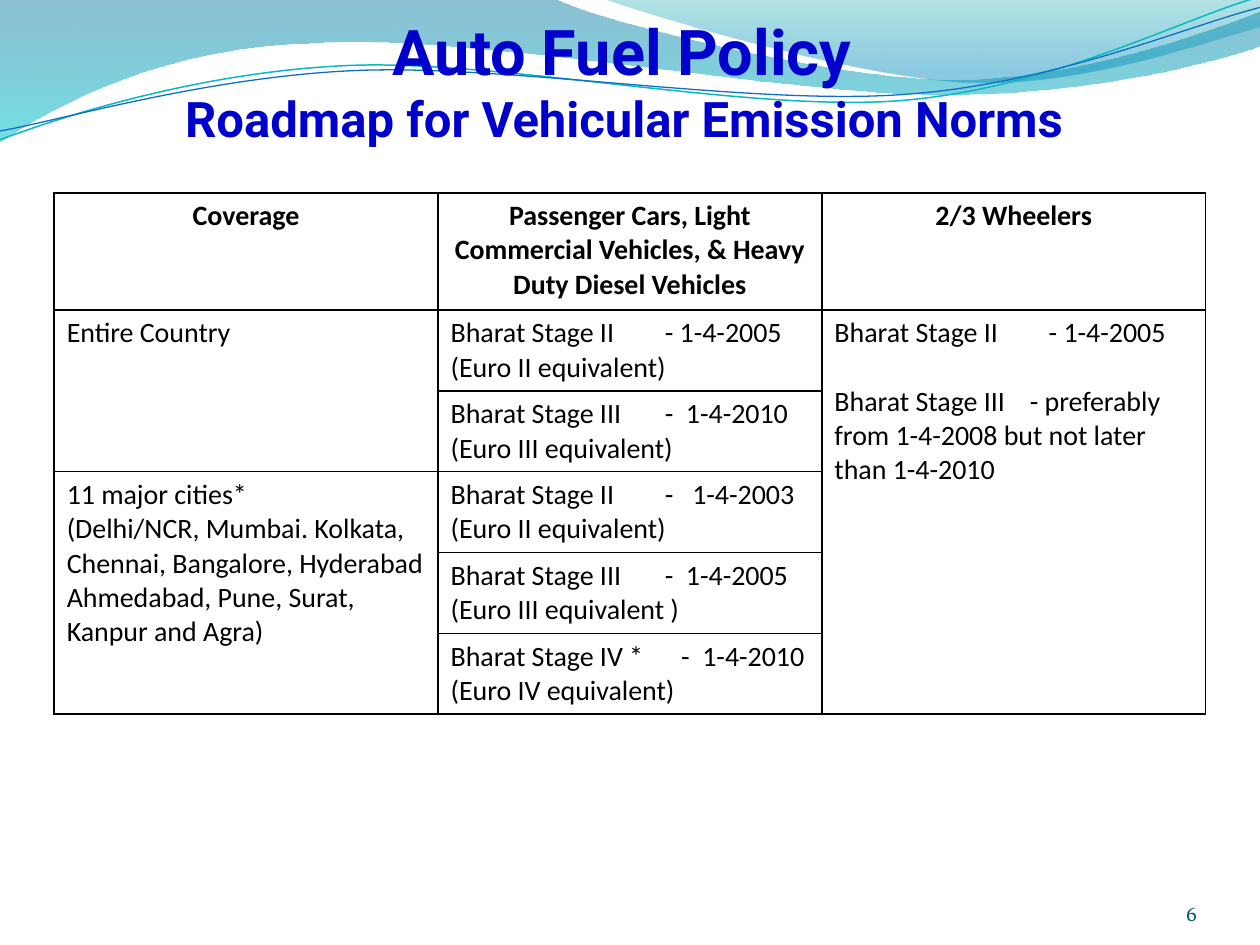
from math import cos, radians, sin

from lxml.etree import SubElement
from pptx import Presentation
from pptx.dml.color import RGBColor
from pptx.enum.text import MSO_ANCHOR, PP_ALIGN
from pptx.oxml.ns import qn
from pptx.util import Inches, Pt

BLACK = RGBColor(0x00, 0x00, 0x00)
TITLE_BLUE = RGBColor(0x00, 0x00, 0xCC)
NUMBER_TEAL = RGBColor(0x04, 0x5D, 0x75)
LINE_TEAL = RGBColor(0x0A, 0xB8, 0xBF)
LINE_BLUE = RGBColor(0x0F, 0x6F, 0xC6)
WAVE_BLUE = RGBColor(0x00, 0x74, 0xA1)
WAVE_CYAN = RGBColor(0x00, 0xC6, 0xCF)
CREST_TEAL = RGBColor(0x00, 0xA1, 0xA9)
CREST_BLUE = RGBColor(0x00, 0x8B, 0xBF)

CURVE_TILT = -2.7
HEADING_HEIGHT = 0.93
TABLE_HEIGHT = 4.14

# Each outline is a start point followed by straight (x, y) steps
# and cubic curves (x1, y1, x2, y2, x, y), all in inches.
WAVE = [
    (0, 0), (4.4, -0.01),
    (4.76, 0.17, 6.64, 0.63, 7.58, 0.63), (8.53, 0.63, 9.58, 0.26, 10, 0.09),
    (10.01, 0.36),
    (9.83, 0.44, 8.7, 0.76, 7.46, 0.75), (6.22, 0.75, 3.82, 0.28, 2.57, 0.34),
    (1.29, 0.36, 0.46, 0.83, -0.01, 1.13),
]
CREST = [
    (4.79, -0.01),
    (5.09, 0.11, 6.82, 0.62, 7.69, 0.65), (8.56, 0.69, 9.61, 0.32, 10, 0.21),
    (10, 0),
]
TEAL_CURVE = [
    (0, 1.11),
    (0.48, 0.93, 1.58, 0.57, 2.77, 0.52), (3.95, 0.47, 5.93, 0.89, 7.13, 0.8),
    (8.33, 0.71, 9.38, 0.15, 9.98, -0.02),
]
BLUE_CURVE = [
    (0, 1.04),
    (0.47, 0.96, 1.64, 0.61, 2.83, 0.56), (4.03, 0.51, 5.97, 0.84, 7.17, 0.75),
    (8.36, 0.67, 9.41, 0.21, 10, 0.06),
]

HEADINGS = [
    "Coverage",
    "Passenger Cars, Light Commercial Vehicles, & Heavy Duty Diesel Vehicles",
    "2/3 Wheelers",
]
CAR_NORMS = [
    ("Bharat Stage II\t- 1-4-2005", "(Euro II equivalent)"),
    ("Bharat Stage III\t-  1-4-2010", "(Euro III equivalent)"),
    ("Bharat Stage II\t-   1-4-2003", "(Euro II equivalent)"),
    ("Bharat Stage III\t-  1-4-2005", "(Euro III equivalent )"),
    ("Bharat Stage IV *\t-  1-4-2010", "(Euro IV equivalent)"),
]
CITIES = [
    "11 major cities*",
    "(Delhi/NCR, Mumbai. Kolkata, Chennai, Bangalore, Hyderabad "
    "Ahmedabad, Pune, Surat, Kanpur and Agra)",
]
WHEELER_NORMS = [
    "Bharat Stage II\t- 1-4-2005",
    "Bharat Stage III\t- preferably from 1-4-2008 but not later than 1-4-2010",
]


def write_text(paragraph, text, *, size=16, font="Calibri", color=BLACK, bold=False,
               align=PP_ALIGN.LEFT, space_before=0, tab=None):
    paragraph.alignment = align
    paragraph.space_before = Pt(space_before)
    if tab:
        tab_list = SubElement(paragraph._p.get_or_add_pPr(), qn("a:tabLst"))
        SubElement(tab_list, qn("a:tab"), pos=str(Inches(tab)), algn="l")
    run = paragraph.add_run()
    run.text = text
    run.font.size = Pt(size)
    run.font.name = font
    run.font.bold = bold
    run.font.color.rgb = color


def rotate(points, degrees):
    """Turn the points about the middle of their first and last."""
    (x1, y1), (x2, y2) = points[0], points[-1]
    middle_x, middle_y = (x1 + x2) / 2, (y1 + y2) / 2
    cosine, sine = cos(radians(degrees)), sin(radians(degrees))
    return [(middle_x + (x - middle_x) * cosine - (y - middle_y) * sine,
             middle_y + (x - middle_x) * sine + (y - middle_y) * cosine)
            for x, y in points]


class SlideBuilder:
    def __init__(self, slide):
        self.slide = slide

    def outline(self, outline, close, tilt=0):
        points = [step[i:i + 2] for step in outline for i in range(0, len(step), 2)]
        start, *others = [(Inches(x), Inches(y)) for x, y in rotate(points, -tilt)]
        builder = self.slide.shapes.build_freeform(*start)
        builder.add_line_segments(others, close=close)
        shape = builder.convert_to_shape()
        shape.rotation = tilt
        shape.shadow.inherit = False
        self.bend(shape, outline)
        return shape

    def bend(self, shape, outline):
        """Turn each three segments that stand for a cubic curve into one."""
        segments = iter(list(shape._element.iter(qn("a:lnTo"))))
        for step in outline[1:]:
            first = next(segments)
            if len(step) == 6:
                first.tag = qn("a:cubicBezTo")
                for _ in range(2):
                    segment = next(segments)
                    first.append(segment[0])
                    segment.getparent().remove(segment)

    def gradient_area(self, outline, stops):
        """Draw a top-to-bottom gradient; stops hold position, color, opacity percent."""
        shape = self.outline(outline, close=True)
        shape.line.fill.background()
        shape.fill.gradient()
        shape.fill.gradient_angle = 270
        for stop, (position, color, opacity) in zip(shape.fill.gradient_stops, stops):
            stop.position = position
            stop.color.rgb = color
            color_element = stop._gs.find(qn("a:srgbClr"))
            SubElement(color_element, qn("a:alpha"), val=str(opacity * 1000))

    def curve(self, outline, color, width):
        shape = self.outline(outline, close=False, tilt=CURVE_TILT)
        shape.fill.background()
        shape.line.color.rgb = color
        shape.line.width = Pt(width)

    def text_box(self, left, top, width, height, margin_top=0):
        box = self.slide.shapes.add_textbox(
            Inches(left), Inches(top), Inches(width), Inches(height))
        frame = box.text_frame
        frame.word_wrap = True
        frame.vertical_anchor = MSO_ANCHOR.BOTTOM
        frame.margin_left = frame.margin_right = frame.margin_bottom = 0
        frame.margin_top = Inches(margin_top)
        return frame.paragraphs[0]

    def table(self, left, top, width, row_heights, columns):
        table = self.slide.shapes.add_table(
            len(row_heights), columns, Inches(left), Inches(top),
            Inches(width), Inches(sum(row_heights))).table
        table.first_row = table.horz_banding = False
        for column in table.columns:
            column.width = Inches(width / columns)
        for row, row_height in zip(table.rows, row_heights):
            row.height = Inches(row_height)
        for cell in table.iter_cells():
            self.border(cell)
            cell.fill.background()
        return table

    def border(self, cell):
        properties = cell._tc.get_or_add_tcPr()
        for side in ("lnL", "lnR", "lnT", "lnB"):
            line = SubElement(properties, qn(f"a:{side}"), w=str(Pt(1)))
            fill = SubElement(line, qn("a:solidFill"))
            SubElement(fill, qn("a:srgbClr"), val=str(BLACK))

    def cell_text(self, cell, lines, tabs=(None, None), gap=0, **text_format):
        frame = cell.text_frame
        for index, (line, tab) in enumerate(zip(lines, tabs)):
            paragraph = frame.add_paragraph() if index else frame.paragraphs[0]
            write_text(paragraph, line, tab=tab,
                       space_before=gap if index else 0, **text_format)


def main():
    presentation = Presentation()
    presentation.slide_width = Inches(10)
    presentation.slide_height = Inches(7.5)
    builder = SlideBuilder(presentation.slides.add_slide(presentation.slide_layouts[6]))

    builder.gradient_area(WAVE, [(0, WAVE_BLUE, 45), (1, WAVE_CYAN, 55)])
    builder.gradient_area(CREST, [(0, CREST_TEAL, 30), (0.8, CREST_BLUE, 45)])
    builder.curve(TEAL_CURVE, LINE_TEAL, 0.85)
    builder.curve(BLUE_CURVE, LINE_BLUE, 0.75)

    title = builder.text_box(0.5, 0, 9, 1.17, margin_top=0.05)
    title_format = dict(font="Roboto", color=TITLE_BLUE, bold=True, align=PP_ALIGN.CENTER)
    write_text(title, "Auto Fuel Policy ", size=36, **title_format)
    title.add_line_break()
    write_text(title, "Roadmap for Vehicular Emission Norms ", size=28, **title_format)

    number = builder.text_box(8.67, 6.95, 0.83, 0.4)
    write_text(number, "6", size=12, font="Vollkorn", color=NUMBER_TEAL, align=PP_ALIGN.RIGHT)

    norm_height = (TABLE_HEIGHT - HEADING_HEIGHT) / len(CAR_NORMS)
    row_heights = [HEADING_HEIGHT] + [norm_height] * len(CAR_NORMS)
    table = builder.table(0.43, 1.53, 9.14, row_heights, len(HEADINGS))
    for first, last, column in ((1, 2, 0), (3, 5, 0), (1, 5, 2)):
        table.cell(first, column).merge(table.cell(last, column))
    for column, heading in enumerate(HEADINGS):
        builder.cell_text(table.cell(0, column), [heading], bold=True, align=PP_ALIGN.CENTER)
    builder.cell_text(table.cell(1, 0), ["Entire Country"])
    builder.cell_text(table.cell(3, 0), CITIES)
    for row, norm in enumerate(CAR_NORMS, start=1):
        dash_position = 1.83 if "IV" in norm[0] else 1.7
        builder.cell_text(table.cell(row, 1), norm, tabs=(dash_position, None))
    builder.cell_text(table.cell(1, 2), WHEELER_NORMS, tabs=(1.7, 1.55), gap=19.5)

    presentation.save("out.pptx")


if __name__ == "__main__":
    main()
